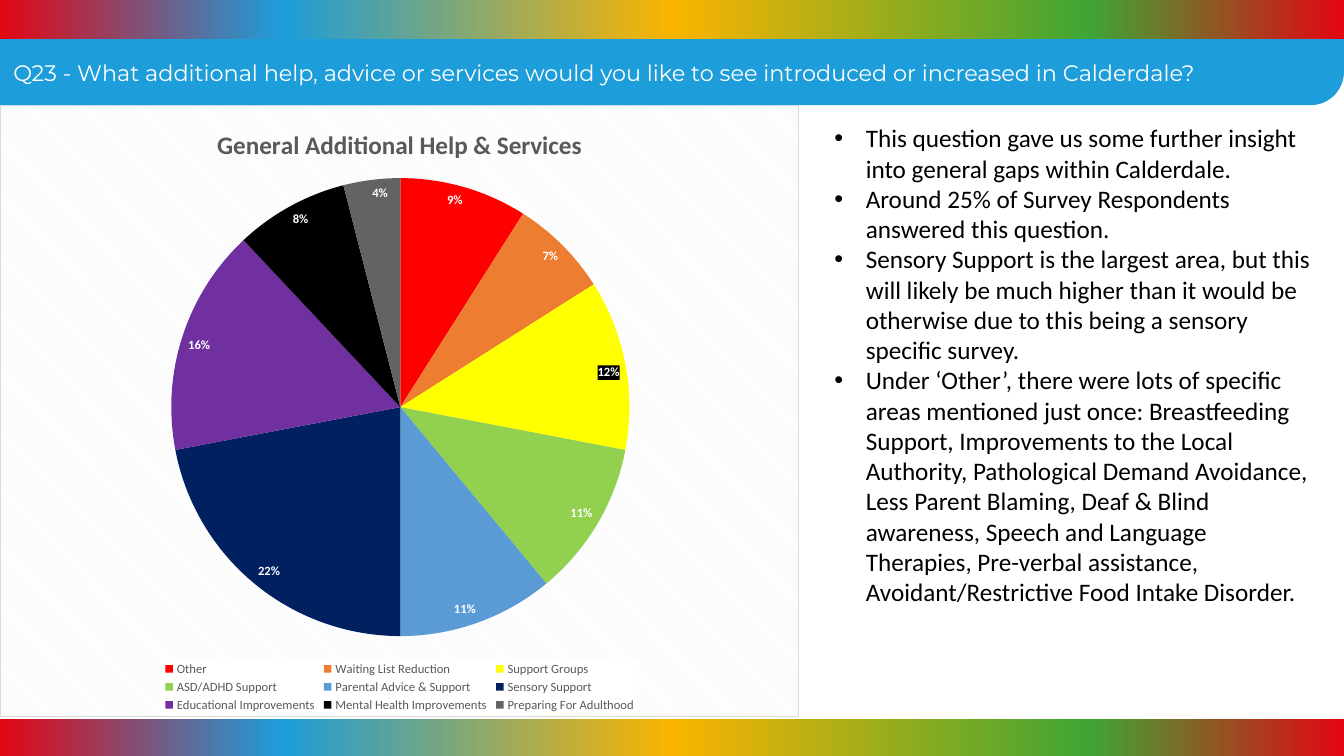
from lxml.etree import SubElement
from pptx import Presentation
from pptx.chart.data import CategoryChartData
from pptx.dml.color import RGBColor
from pptx.enum.chart import XL_CHART_TYPE as CT, XL_LABEL_POSITION as LP, XL_LEGEND_POSITION as LegPos
from pptx.enum.shapes import MSO_SHAPE as Shape
from pptx.enum.text import MSO_ANCHOR, MSO_AUTO_SIZE, PP_ALIGN
from pptx.oxml import parse_xml
from pptx.oxml.ns import nsdecls, qn
from pptx.util import Cm, Pt

TITLE = "Q23 - What additional help, advice or services would you like to see introduced or increased in Calderdale?"
CHART_TITLE = "General Additional Help & Services"
SLICES = [
    ("Other", 9, "FF0000"),
    ("Waiting List Reduction", 7, "ED7D31"),
    ("Support Groups", 12, "FFFF00"),
    ("ASD/ADHD Support", 11, "92D050"),
    ("Parental Advice & Support", 11, "5B9BD5"),
    ("Sensory Support", 22, "002060"),
    ("Educational Improvements", 16, "7030A0"),
    ("Mental Health Improvements", 8, "000000"),
    ("Preparing For Adulthood", 4, "636363"),
]
BOXED_LABEL = 2
BULLETS = [
    "This question gave us some further insight into general gaps within Calderdale.",
    "Around 25% of Survey Respondents answered this question.",
    "Sensory Support is the largest area, but this will likely be much higher than it would be "
    "otherwise due to this being a sensory specific survey.",
    "Under ‘Other’, there were lots of specific areas mentioned just once: Breastfeeding Support, "
    "Improvements to the Local Authority, Pathological Demand Avoidance, Less Parent Blaming, "
    "Deaf & Blind awareness, Speech and Language Therapies, Pre-verbal assistance, "
    "Avoidant/Restrictive Food Intake Disorder.",
]
COLORS = {"red": "E30613", "blue": "1D9DD9", "amber": "FAB400", "green": "3FA535",
          "white": "FFFFFF", "black": "000000", "grey": "595959", "border": "D9D9D9", "hatch": "F2F2F2"}
RAINBOW = [(0, "red"), (21, "blue"), (50, "amber"), (81, "green"), (100, "red")]
WIDTH, HEIGHT = Cm(33.87), Cm(19.05)
PLOT_BOX = (0.214, 0.119, 0.574, 0.749)
LEGEND_BOX = (0.2, 0.904, 0.6, 0.094)


def rgb(name):
    return RGBColor.from_string(COLORS[name])


def set_font(font, size, color, name="Calibri", bold=False):
    font.size, font.name, font.bold = Pt(size), name, bold
    font.color.rgb = rgb(color)


def add_band(slide, kind, top, height):
    s = slide.shapes.add_shape(kind, 0, top, WIDTH, height)
    s.shadow.inherit = False
    s.line.fill.background()
    return s


def add_rainbow(slide, top):
    s = add_band(slide, Shape.RECTANGLE, top, Cm(1.01))
    s.fill.gradient()
    s.fill.gradient_angle = 0
    stops = s.fill._fill._gradFill.find(qn("a:gsLst"))
    for stop in list(stops):
        stops.remove(stop)
    for percent, name in RAINBOW:
        stop = SubElement(stops, qn("a:gs"), pos=str(percent * 1000))
        SubElement(stop, qn("a:srgbClr"), val=COLORS[name])


def manual_layout(box, inner=False):
    target = '<c:layoutTarget val="inner"/>' if inner else ""
    modes = "".join(f'<c:{a}Mode val="edge"/>' for a in "xy")
    sizes = "".join(f'<c:{a} val="{v}"/>' for a, v in zip("xywh", box))
    return parse_xml(f'<c:layout {nsdecls("c")}><c:manualLayout>{target}{modes}{sizes}'
                     '</c:manualLayout></c:layout>')


def replace_layout(parent, layout, index):
    old = parent.find(qn("c:layout"))
    if old is not None:
        parent.remove(old)
    parent.insert(index, layout)


def solid_box(color):
    return (f'<c:spPr {nsdecls("c", "a")}><a:solidFill><a:srgbClr val="{COLORS[color]}"/>'
            '</a:solidFill></c:spPr>')


def add_pie(slide):
    data = CategoryChartData()
    data.categories = [name for name, _, _ in SLICES]
    data.add_series("Series 1", [value for _, value, _ in SLICES])
    chart = slide.shapes.add_chart(CT.PIE, 0, Cm(2.64), Cm(20.14), Cm(15.44), data).chart
    set_font(chart.font, 10, "black")

    chart.has_title = True
    p = chart.chart_title.text_frame.paragraphs[0]
    p.text = CHART_TITLE
    set_font(p.font, 18, "grey", bold=True)
    chart.chart_title.include_in_layout = False

    chart.has_legend = True
    legend = chart.legend
    legend.position, legend.include_in_layout = LegPos.BOTTOM, False
    set_font(legend.font, 9, "grey")
    replace_layout(legend._element, manual_layout(LEGEND_BOX), 1)
    legend._element.find(qn("c:overlay")).addnext(parse_xml(solid_box("white")))

    plot = chart.plots[0]
    plot.vary_by_categories = True
    replace_layout(chart._chartSpace.chart.plotArea, manual_layout(PLOT_BOX, True), 0)
    for i, (_, _, color) in enumerate(SLICES):
        fill = plot.series[0].points[i].format.fill
        fill.solid()
        fill.fore_color.rgb = RGBColor.from_string(color)

    labels = plot.series[0].data_labels
    labels.show_percentage, labels.show_value = True, False
    labels.position = LP.INSIDE_END
    set_font(labels.font, 9, "white", bold=True)
    flags = "".join(f'<c:show{n} val="{int(n == "Percent")}"/>'
                    for n in ("LegendKey", "Val", "CatName", "SerName", "Percent", "BubbleSize"))
    label = parse_xml(f'<c:dLbl {nsdecls("c", "a")}><c:idx val="{BOXED_LABEL}"/>{solid_box("black")}'
                      '<c:txPr><a:bodyPr/><a:p><a:pPr><a:defRPr sz="900" b="1"><a:solidFill>'
                      f'<a:srgbClr val="{COLORS["white"]}"/></a:solidFill><a:latin typeface="Calibri"/>'
                      f'</a:defRPr></a:pPr></a:p></c:txPr><c:dLblPos val="inEnd"/>{flags}</c:dLbl>')
    labels._element.insert(0, label)

    background = parse_xml(
        f'<c:spPr {nsdecls("c", "a")}><a:pattFill prst="dkDnDiag">'
        f'<a:fgClr><a:srgbClr val="{COLORS["hatch"]}"/></a:fgClr>'
        f'<a:bgClr><a:srgbClr val="{COLORS["white"]}"/></a:bgClr></a:pattFill>'
        f'<a:ln w="9525"><a:solidFill><a:srgbClr val="{COLORS["border"]}"/></a:solidFill></a:ln></c:spPr>')
    chart._chartSpace.chart.addnext(background)


def add_bullets(slide):
    tf = slide.shapes.add_textbox(Cm(20.78), Cm(2.97), Cm(12.52), Cm(12.57)).text_frame
    tf.word_wrap = True
    for i, text in enumerate(BULLETS):
        p = tf.add_paragraph() if i else tf.paragraphs[0]
        p.text = text
        set_font(p.font, 18, "black")
        pPr = p._p.get_or_add_pPr()
        pPr.set("marL", str(Cm(0.79)))
        pPr.set("indent", str(-Cm(0.79)))
        bullet_font = parse_xml(f'<a:buFont {nsdecls("a")} typeface="Arial"/>')
        pPr.insert(0, bullet_font)
        bullet_font.addnext(parse_xml(f'<a:buChar {nsdecls("a")} char="•"/>'))


def place_title(slide):
    title = slide.shapes.title
    title.left, title.top, title.width, title.height = Cm(0.08), Cm(1.35), Cm(33.71), Cm(0.94)
    tf = title.text_frame
    tf.text = TITLE
    tf.word_wrap, tf.auto_size = True, MSO_AUTO_SIZE.NONE
    tf.vertical_anchor = MSO_ANCHOR.MIDDLE
    p = tf.paragraphs[0]
    p.alignment = PP_ALIGN.LEFT
    set_font(p.font, 16, "white", "Montserrat")
    slide.shapes._spTree.append(title._element)


def main():
    prs = Presentation()
    prs.slide_width, prs.slide_height = WIDTH, HEIGHT
    slide = prs.slides.add_slide(prs.slide_layouts[5])
    banner = add_band(slide, Shape.ROUND_1_RECTANGLE, Cm(0.97), Cm(1.68))
    banner.adjustments[0] = 0.5
    banner.rotation = 180
    banner._element.spPr.xfrm.set("flipH", "1")
    banner.fill.solid()
    banner.fill.fore_color.rgb = rgb("blue")
    for top in (Cm(-0.03), Cm(18.13)):
        add_rainbow(slide, top)
    place_title(slide)
    add_bullets(slide)
    add_pie(slide)
    prs.save("out.pptx")


if __name__ == "__main__":
    main()
